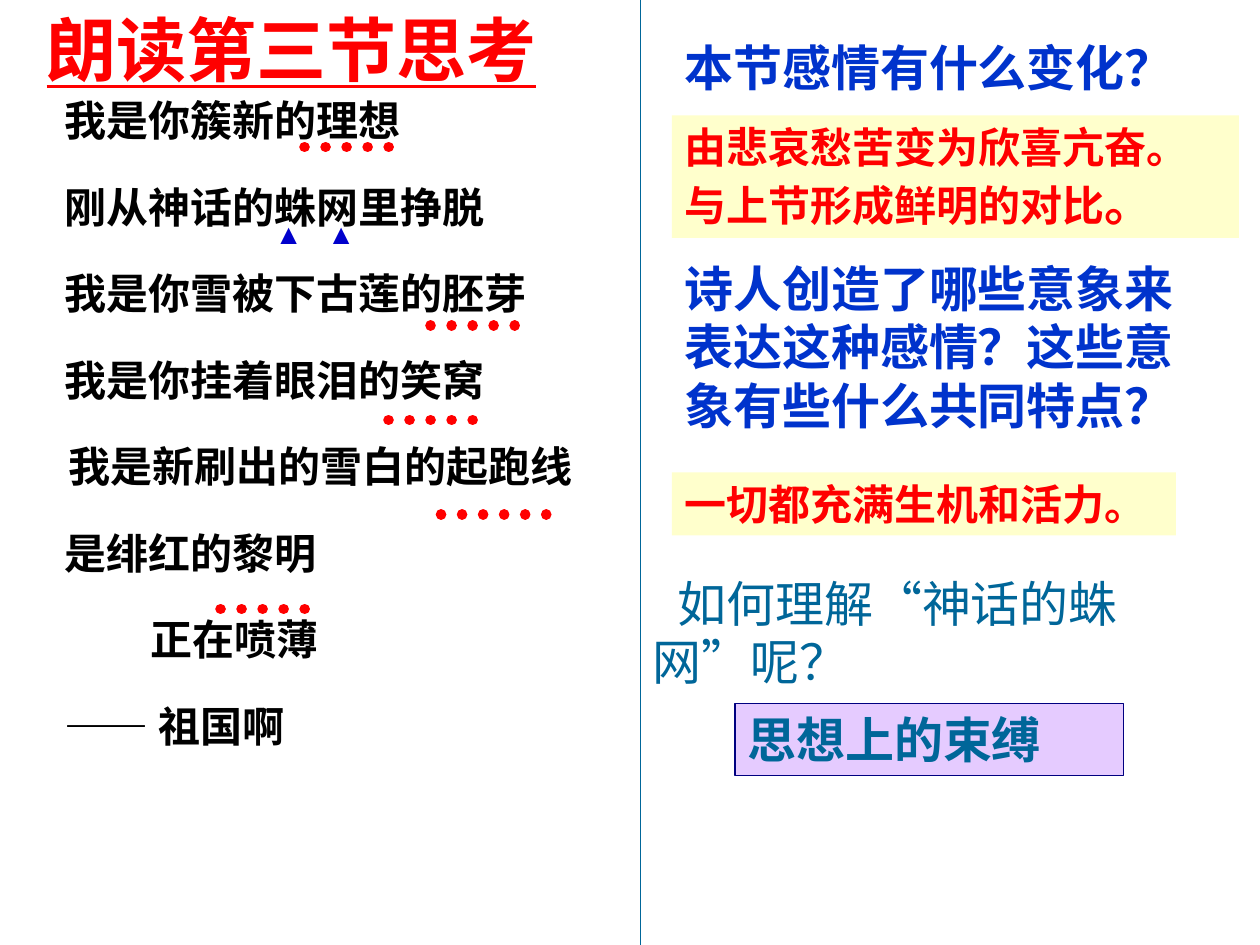
import dataclasses

import pptx
import pptx.dml.color
import pptx.enum.dml
import pptx.enum.lang
import pptx.enum.shapes
import pptx.enum.text
import pptx.oxml.ns
import pptx.util
from lxml import etree

Pt = pptx.util.Pt


@dataclasses.dataclass(frozen=True)
class Theme:
    font: str = "Times New Roman"
    black: str = "000000"
    red: str = "FF0000"
    blue: str = "0033CC"
    marker_blue: str = "0000CC"
    teal: str = "006699"
    navy: str = "000080"
    cream: str = "FFFFCC"
    violet: str = "CC99FF"
    title: int = 40
    question: int = 28
    body: int = 24
    marker: int = 16


THEME = Theme()


@dataclasses.dataclass(frozen=True)
class Box:
    left: float
    top: float
    width: float
    height: float

    def inside(self, left, top, width, height):
        """Return a box placed relative to this one."""
        return Box(self.left + left, self.top + top, width, height)

    def lengths(self):
        """Return the four lengths in points."""
        return [Pt(value) for value in dataclasses.astuple(self)]


def rgb(color):
    """Return the colour object for a hex string."""
    return pptx.dml.color.RGBColor.from_string(color)


def style_paragraph(para, size, color, bold=True, underline=None):
    """Set the font of a whole paragraph."""
    font = para.font
    font.name, font.size, font.bold, font.underline = THEME.font, Pt(size), bold, underline
    font.color.rgb = rgb(color)
    font.language_id = pptx.enum.lang.MSO_LANGUAGE_ID.SIMPLIFIED_CHINESE
    para.alignment = pptx.enum.text.PP_ALIGN.LEFT


def prepare_frame(shape):
    """Make a text frame wrap, start at the top and fit its text."""
    frame = shape.text_frame
    frame.word_wrap = True
    frame.auto_size = pptx.enum.text.MSO_AUTO_SIZE.SHAPE_TO_FIT_TEXT
    frame.vertical_anchor = pptx.enum.text.MSO_ANCHOR.TOP
    return frame


def add_text(page, box, text, size, color, **style):
    """Add a one-paragraph text box and return its paragraph."""
    frame = prepare_frame(page.shapes.add_textbox(*box.lengths()))
    para = frame.paragraphs[0]
    para.add_run().text = text
    style_paragraph(para, size, color, **style)
    return para


def add_answer(page, box, text, size, color, fill, outline=None, opacity=None):
    """Add a filled answer rectangle and return its paragraph."""
    shape = page.shapes.add_shape(pptx.enum.shapes.MSO_SHAPE.RECTANGLE, *box.lengths())
    shape.shadow.inherit = False
    shape.fill.solid()
    shape.fill.fore_color.rgb = rgb(fill)
    if opacity:
        swatch = next(shape.fill._xPr.iter(pptx.oxml.ns.qn("a:srgbClr")))
        etree.SubElement(swatch, pptx.oxml.ns.qn("a:alpha"), val=str(opacity * 1000))
    if outline:
        shape.line.color.rgb = rgb(outline)
        shape.line.width = Pt(0.75)
    else:
        shape.line.fill.background()
    para = prepare_frame(shape).paragraphs[0]
    para.add_run().text = text
    style_paragraph(para, size, color)
    return para


def add_line(page, start, end, color, width, dotted=False):
    """Add a straight line, with round dots if asked."""
    line = page.shapes.add_connector(
        pptx.enum.shapes.MSO_CONNECTOR.STRAIGHT, *[Pt(value) for value in (*start, *end)])
    line.line.color.rgb = rgb(color)
    line.line.width = Pt(width)
    if dotted:
        line.line.dash_style = pptx.enum.dml.MSO_LINE.ROUND_DOT
        line.line._ln.set("cap", "rnd")
    etree.SubElement(line._element.spPr, pptx.oxml.ns.qn("a:effectLst"))


def add_poem(page, box):
    """Add the stanza, one paragraph a verse."""
    verses = ["我是你簇新的理想", "刚从神话的蛛网里挣脱", "我是你雪被下古莲的胚芽",
              "我是你挂着眼泪的笑窝", "我是新刷出的雪白的起跑线", "是绯红的黎明",
              "正在喷薄", "—— 祖国啊"]
    frame = prepare_frame(page.shapes.add_textbox(*box.lengths()))
    for number, verse in enumerate(verses):
        para = frame.add_paragraph() if number else frame.paragraphs[0]
        para.add_run().text = verse
        style_paragraph(para, THEME.body, THEME.black)
        para.line_spacing = 1.3
        para.space_before = Pt(THEME.body / 2)
        if verse == "我是新刷出的雪白的起跑线":
            para.alignment = pptx.enum.text.PP_ALIGN.CENTER
        if verse == "正在喷薄":
            para._p.get_or_add_pPr().set("marL", str(Pt(49)))


def add_reading(page, box):
    """Fill the left half: heading, stanza and emphasis marks."""
    add_poem(page, box.inside(30, 42, 306, 407.5))
    for left, top, width in [(174, 84, 60), (246, 186, 60), (222, 240, 60),
                             (252, 294, 72), (126, 348, 60)]:
        mark = box.inside(left, top, width, 0)
        add_line(page, (mark.left, mark.top), (mark.left + width, mark.top),
                 THEME.red, 6, dotted=True)
    for left in (150, 180):
        add_text(page, box.inside(left, 120, 36, 26.5), "▲",
                 THEME.marker, THEME.marker_blue, bold=False)
    add_text(page, box.inside(19.5, 0, 309, 55.5), "朗读第三节思考",
             THEME.title, THEME.red, underline=True)


def add_questions(page, box):
    """Fill the right half: questions with their answers."""
    add_text(page, box.inside(18, 18, 306, 41), "本节感情有什么变化？",
             THEME.question, THEME.blue)
    para = add_answer(page, box.inside(18, 66, 324, 70),
                      "由悲哀愁苦变为欣喜亢奋。与上节形成鲜明的对比",
                      THEME.body, THEME.red, THEME.cream)
    stop = para.add_run()
    stop.text = "。"
    stop.font.size = Pt(THEME.question)
    add_text(page, box.inside(18, 144, 300, 108),
             "诗人创造了哪些意象来表达这种感情？这些意象有些什么共同特点？",
             THEME.question, THEME.blue)
    add_answer(page, box.inside(18, 270, 288, 36), "一切都充满生机和活力。",
               THEME.body, THEME.red, THEME.cream)
    para = add_text(page, box.inside(0, 324, 342, 75), "如何理解“神话的蛛网”呢？",
                    THEME.question, THEME.teal, bold=False)
    para._p.get_or_add_pPr().set("indent", str(Pt(THEME.question / 2)))
    add_answer(page, box.inside(54, 402, 222, 41), "思想上的束缚", THEME.question,
               THEME.teal, THEME.violet, outline=THEME.navy, opacity=50)


def main():
    """Build and save the slide."""
    deck = pptx.Presentation()
    deck.slide_width, deck.slide_height = Pt(720), Pt(540)
    page = deck.slides.add_slide(deck.slide_layouts[6])
    middle = 366
    add_line(page, (middle, 0), (middle, 540), THEME.teal, 0.75)
    add_reading(page, Box(0, 0, middle, 540))
    add_questions(page, Box(middle, 0, 720 - middle, 540))
    deck.save("out.pptx")


if __name__ == "__main__":
    main()
